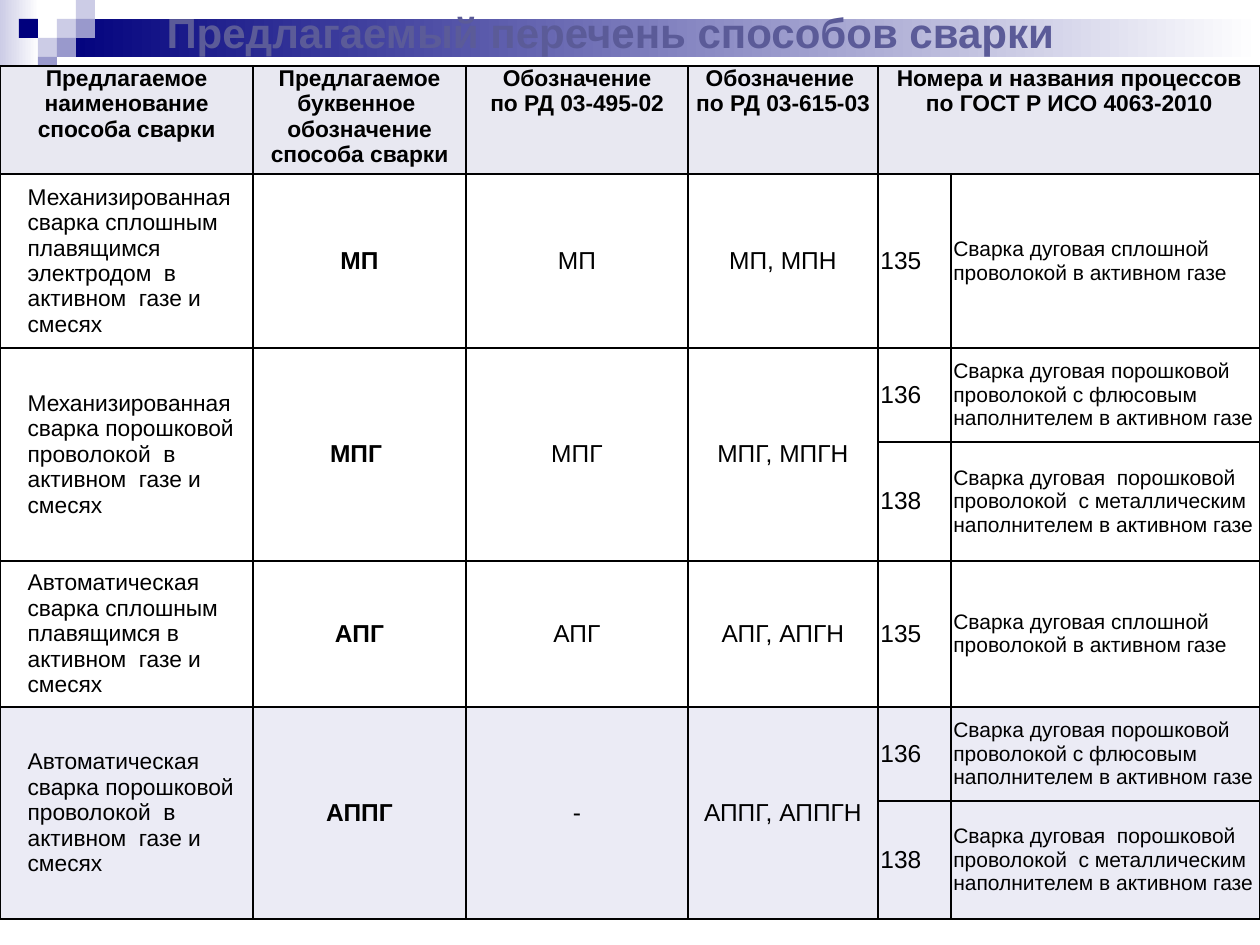
from lxml import etree
from pptx import Presentation, util as u
from pptx.dml.color import RGBColor
from pptx.enum import shapes, text
from pptx.oxml.ns import qn

BLACK, WHITE = RGBColor(0, 0, 0), RGBColor(255, 255, 255)
NAVY, LILAC, PALE = RGBColor(0, 0, 0x7D), RGBColor(0x99, 0x99, 0xCC), RGBColor(0xCC, 0xCC, 0xE6)
TITLE_COLOR = RGBColor(0x5B, 0x5B, 0x98)
HEAD_FILL, LAST_FILL = RGBColor(0xE8, 0xE8, 0xF1), RGBColor(0xEB, 0xEB, 0xF5)
FONT = "Arial"
CENTER, LEFT = text.PP_ALIGN.CENTER, text.PP_ALIGN.LEFT
TOP, MIDDLE = text.MSO_ANCHOR.TOP, text.MSO_ANCHOR.MIDDLE

# Content
TITLE = "Предлагаемый перечень способов сварки"
HEADERS = [
    "Предлагаемое наименование способа сварки",
    "Предлагаемое буквенное  обозначение способа сварки",
    "Обозначение\nпо РД 03-495-02",
    "Обозначение \nпо РД 03-615-03",
    "Номера и названия процессов\nпо ГОСТ Р ИСО 4063-2010",
]
SOLID = [("135", "Сварка дуговая сплошной проволокой в активном газе")]
POWDER = [
    ("136", "Сварка дуговая порошковой проволокой с флюсовым наполнителем в активном газе"),
    ("138", "Сварка дуговая  порошковой проволокой  с металлическим наполнителем в активном газе"),
]
# name, letter code, two standard codes, processes, fill
METHODS = [
    ("Механизированная сварка сплошным плавящимся электродом  в активном  газе и смесях",
     "МП", "МП", "МП, МПН", SOLID, WHITE),
    ("Механизированная сварка порошковой проволокой  в активном  газе и смесях",
     "МПГ ", "МПГ", "МПГ, МПГН", POWDER, WHITE),
    ("Автоматическая сварка сплошным плавящимся в активном  газе и смесях",
     "АПГ", "АПГ", "АПГ, АПГН", SOLID, WHITE),
    ("Автоматическая сварка порошковой проволокой  в активном  газе и смесях",
     "АППГ", "-", "АППГ, АППГН", POWDER, LAST_FILL),
]
COLS = [253, 213, 222, 190, 73, 309]
ROWS = [108, 174, 94, 119, 146, 94, 118]
TABLE_TOP = 66

# Banner: gradient bars (left, top, width, height, first colour), then squares (column, row, colour)
BARS = [(0, 0, 39, 73, PALE), (57, 19, 1203, 38, NAVY)]
SQUARE = 19
SQUARES = [(3, 1, PALE), (4, 0, PALE), (4, 1, LILAC), (2, 2, PALE),
           (1, 1, NAVY), (3, 2, LILAC), (2, 3, LILAC)]


def px(n):
    return u.Emu(round(n * 914400 / 126))


def add_rect(s, x, y, w, h):
    sp = s.shapes.add_shape(shapes.MSO_SHAPE.RECTANGLE, px(x), px(y), px(w), px(h))
    sp.shadow.inherit = False
    sp.line.fill.background()
    return sp


def write(p, content, size, color=BLACK, bold=False, align=LEFT):
    p.alignment = align
    for i, line in enumerate(content.split("\n")):
        if i:
            p.add_line_break()
        r = p.add_run()
        r.text = line
        r.font.name, r.font.size, r.font.bold = FONT, u.Pt(size), bold
        r.font.color.rgb = color


def style_cell(cell, fill, anchor):
    cell.margin_left = cell.margin_right = u.Inches(0.02)
    cell.margin_top = cell.margin_bottom = 0
    cell.vertical_anchor = anchor
    tc_pr = cell._tc.get_or_add_tcPr()
    for side in "LRTB":
        ln = etree.SubElement(tc_pr, qn(f"a:ln{side}"), w=str(u.Pt(1)))
        solid = etree.SubElement(ln, qn("a:solidFill"))
        etree.SubElement(solid, qn("a:srgbClr"), val=str(BLACK))
    cell.fill.solid()
    cell.fill.fore_color.rgb = fill


def cell_paragraph(table, row, col):
    return table.cell(row, col).text_frame.paragraphs[0]


prs = Presentation()
prs.slide_width, prs.slide_height = u.Inches(10), u.Inches(7.5)
s = prs.slides.add_slide(prs.slide_layouts[6])

# Banner
for x, y, w, h, color in BARS:
    sp = add_rect(s, x, y, w, h)
    sp.fill.gradient()
    sp.fill.gradient_angle = 0
    for stop, stop_color in zip(sp.fill.gradient_stops, (color, WHITE)):
        stop.color.rgb = stop_color
for col, row, color in SQUARES:
    sp = add_rect(s, col * SQUARE, row * SQUARE, SQUARE, SQUARE)
    sp.fill.solid()
    sp.fill.fore_color.rgb = color

# Table grid
table = s.shapes.add_table(len(ROWS), len(COLS), 0, px(TABLE_TOP),
                           px(sum(COLS)), px(sum(ROWS))).table
table.first_row = table.horz_banding = False
for column, w in zip(table.columns, COLS):
    column.width = px(w)
for table_row, h in zip(table.rows, ROWS):
    table_row.height = px(h)

# Header row
for cell in table.rows[0].cells:
    style_cell(cell, HEAD_FILL, TOP)
table.cell(0, 4).merge(table.cell(0, 5))
for col, header in enumerate(HEADERS):
    write(cell_paragraph(table, 0, col), header, 13, bold=True, align=CENTER)

# Method rows: one line per process, the other columns merged over them
row = 1
for name, letters, *codes, processes, fill in METHODS:
    last = row + len(processes) - 1
    for i, (number, process) in enumerate(processes, row):
        for cell in table.rows[i].cells:
            style_cell(cell, fill, MIDDLE)
        write(cell_paragraph(table, i, 4), number, 14)
        write(cell_paragraph(table, i, 5), process, 12)
    if last > row:
        for col in range(4):
            table.cell(row, col).merge(table.cell(last, col))
    p = cell_paragraph(table, row, 0)
    p._p.get_or_add_pPr().set("marL", str(u.Inches(0.2)))
    write(p, name, 13)
    for col, code in enumerate([letters, *codes], 1):
        write(cell_paragraph(table, row, col), code, 14, bold=col == 1, align=CENTER)
    row = last + 1

# Title, set a little left of centre by its right inset
tf = s.shapes.add_textbox(px(25), 0, px(1206), px(74)).text_frame
tf.word_wrap = True
tf.vertical_anchor = TOP
tf.margin_left = tf.margin_top = tf.margin_bottom = u.Inches(0.05)
tf.margin_right = u.Inches(0.33)
p = tf.paragraphs[0]
p.space_before = u.Pt(4)
write(p, TITLE, 24, TITLE_COLOR, bold=True, align=CENTER)

prs.save("out.pptx")
